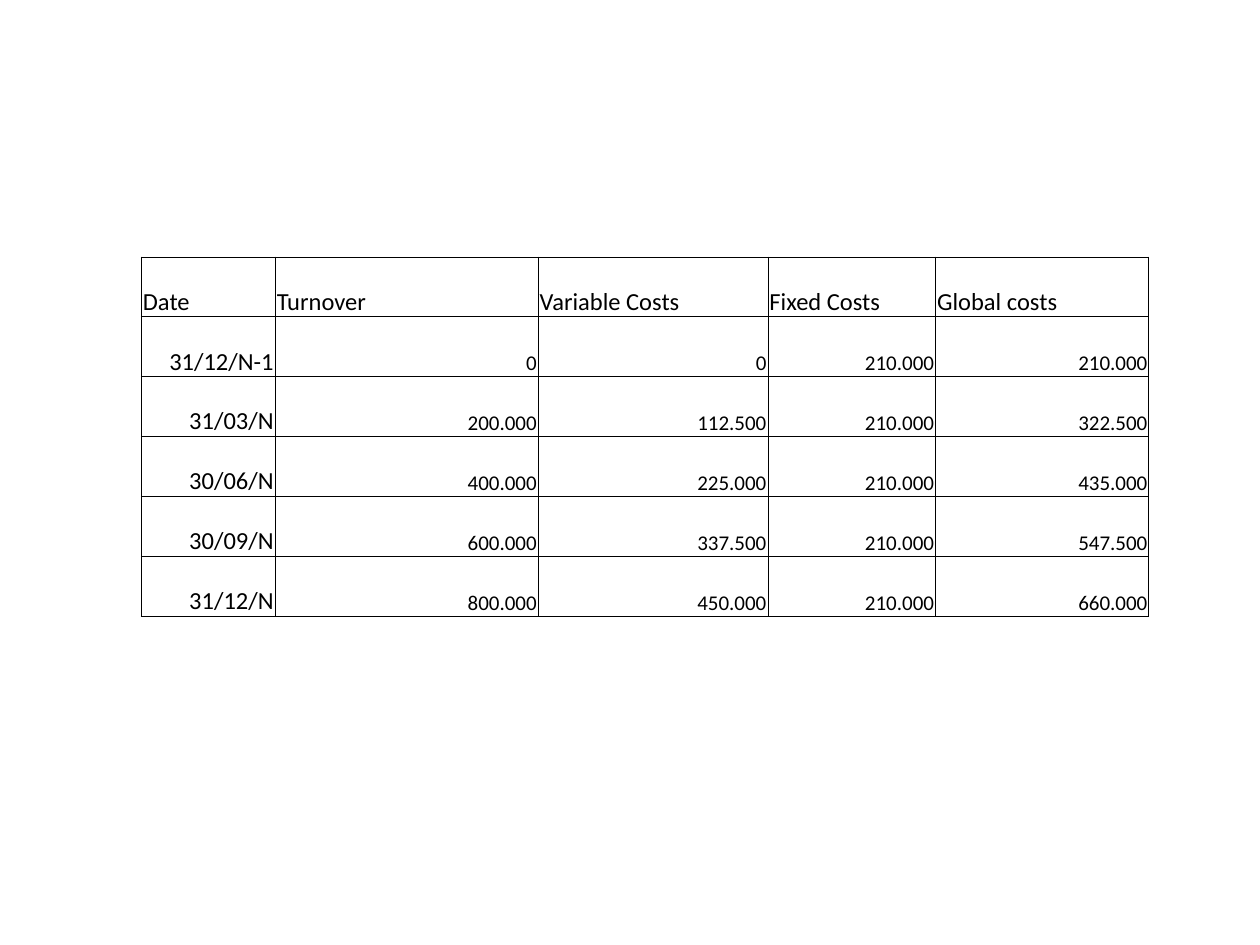
from lxml.etree import fromstring
from pptx import Presentation
from pptx.dml.color import RGBColor
from pptx.enum.text import MSO_ANCHOR, PP_ALIGN
from pptx.oxml.ns import nsdecls
from pptx.util import Cm, Pt

HEAD = ["Date", "Turnover", "Variable Costs", "Fixed Costs", "Global costs"]
ROWS = [
    ["31/12/N-1", "0", "0", "210.000", "210.000"],
    ["31/03/N", "200.000", "112.500", "210.000", "322.500"],
    ["30/06/N", "400.000", "225.000", "210.000", "435.000"],
    ["30/09/N", "600.000", "337.500", "210.000", "547.500"],
    ["31/12/N", "800.000", "450.000", "210.000", "660.000"],
]
WIDTHS = [2.7, 5.3, 4.63, 3.38, 4.3]


def color(code):
    return RGBColor.from_string(code)


class Deck:
    font = "Calibri"
    ink = "000000"
    line = Pt(0.5)
    cell_form = {
        "vertical_anchor": MSO_ANCHOR.BOTTOM,
        "margin_left": Cm(0.03),
        "margin_right": Cm(0.03),
        "margin_top": Cm(0.03),
        "margin_bottom": 0,
    }

    def __init__(self):
        self.file = Presentation()
        self.file.slide_width, self.file.slide_height = Cm(25.4), Cm(19.05)
        self.slide = self.file.slides.add_slide(self.file.slide_layouts[6])

    def border(self, cell):
        props = cell._tc.get_or_add_tcPr()
        for spot, side in enumerate("LRTB"):
            props.insert(spot, fromstring(
                f'<a:ln{side} {nsdecls("a")} w="{self.line}"><a:solidFill>'
                f'<a:srgbClr val="{self.ink}"/></a:solidFill></a:ln{side}>'))

    def cell(self, cell, text, size, align):
        for name, value in self.cell_form.items():
            setattr(cell, name, value)
        cell.fill.background()
        self.border(cell)
        para = cell.text_frame.paragraphs[0]
        para.alignment = align
        run = para.add_run()
        run.text = text
        form = {"name": self.font, "size": Pt(size), "bold": False}
        for name, value in form.items():
            setattr(run.font, name, value)
        run.font.color.rgb = color(self.ink)

    def table(self, data, left, top, widths, height):
        frame = self.slide.shapes.add_table(
            len(data), len(widths), Cm(left), Cm(top),
            Cm(sum(widths)), Cm(height))
        table = frame.table
        table.first_row = table.horz_banding = False
        for col, width in zip(table.columns, widths):
            col.width = Cm(width)
        for r, texts in enumerate(data):
            for c, text in enumerate(texts):
                # Headings and dates are larger than the figures
                size = 14 if r == 0 or c == 0 else 12
                align = PP_ALIGN.RIGHT if r else PP_ALIGN.LEFT
                self.cell(table.cell(r, c), text, size, align)


def main():
    deck = Deck()
    # Cost table by quarter
    deck.table([HEAD] + ROWS, 2.85, 5.18, WIDTHS, 7.24)
    deck.file.save("out.pptx")


if __name__ == "__main__":
    main()
